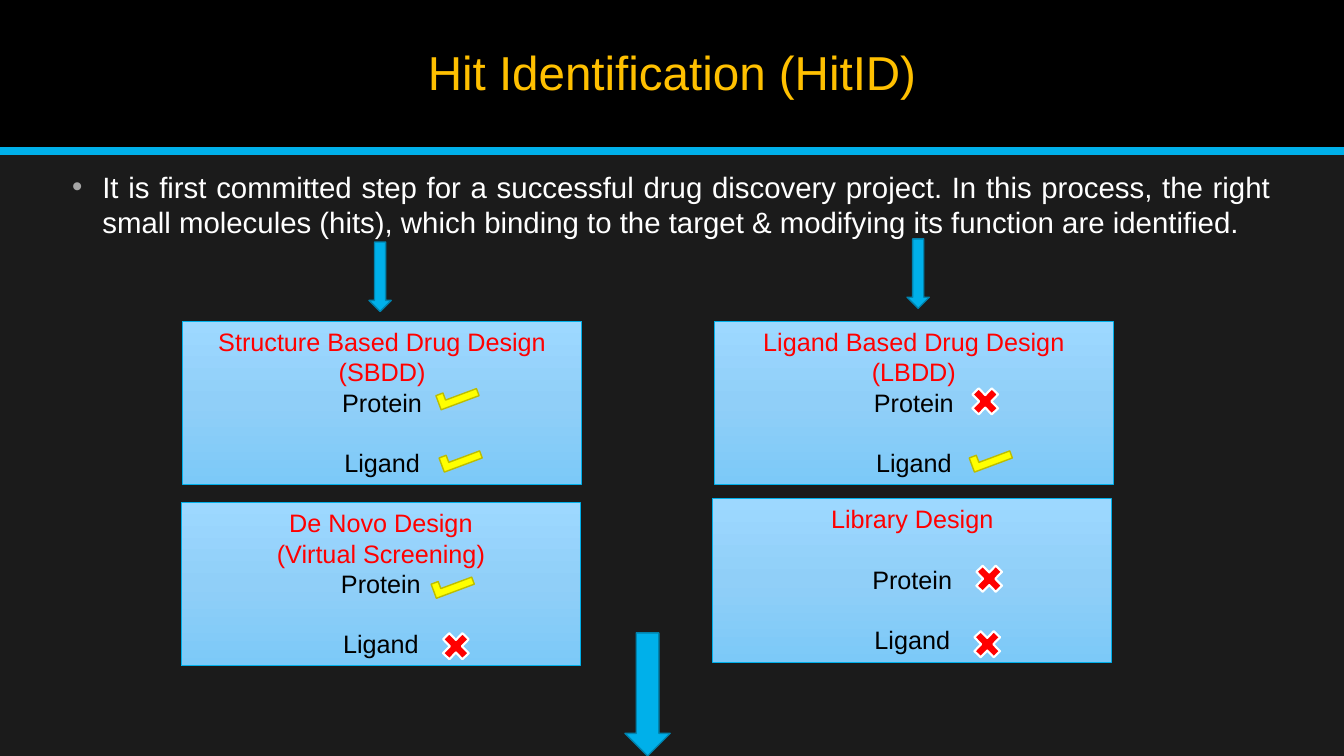
from copy import deepcopy

from pptx import Presentation
from pptx.dml.color import RGBColor
from pptx.enum.shapes import MSO_CONNECTOR, MSO_SHAPE
from pptx.enum.text import MSO_ANCHOR, PP_ALIGN
from pptx.oxml.ns import qn
from pptx.util import Cm, Pt
from lxml import etree

RECTANGLE = MSO_SHAPE.RECTANGLE
DOWN_ARROW = MSO_SHAPE.DOWN_ARROW
CHECK = MSO_SHAPE.CORNER
CROSS = MSO_SHAPE.MATH_MULTIPLY
STRAIGHT = MSO_CONNECTOR.STRAIGHT
CENTER, JUSTIFY = PP_ALIGN.CENTER, PP_ALIGN.JUSTIFY
TOP, MIDDLE = MSO_ANCHOR.TOP, MSO_ANCHOR.MIDDLE

COLORS = {
    "background": "1B1B1B", "band": "000000", "accent": "00B0EA",
    "arrow_edge": "0082AD", "title": "FFC000", "body": "FFFFFF",
    "bullet": "A6A6A6", "heading": "FF0000", "item": "000000",
    "check": "FFFF00", "check_edge": "BDBD00",
    "cross": "FF0000", "cross_edge": "FFFFFF",
    "card_top": "9DD8FF", "card_middle": "90CFF8", "card_bottom": "7CC9F8",
}
SLIDE_WIDTH, BAND_HEIGHT = 33.87, 3.81

prs = Presentation()
prs.slide_width, prs.slide_height = Cm(SLIDE_WIDTH), Cm(19.05)
slide = prs.slides.add_slide(prs.slide_layouts[6])
slide.background.fill.solid()
slide.background.fill.fore_color.rgb = RGBColor.from_string(COLORS["background"])


def add_figure(kind, left, top, width, height, fill=None, edge=None, weight=1):
    figure = slide.shapes.add_shape(kind, Cm(left), Cm(top), Cm(width), Cm(height))
    figure.shadow.inherit = False
    if fill:
        figure.fill.solid()
        figure.fill.fore_color.rgb = RGBColor.from_string(COLORS[fill])
    if edge:
        figure.line.color.rgb = RGBColor.from_string(COLORS[edge])
        figure.line.width = Pt(weight)
    else:
        figure.line.fill.background()
    return figure


def style_paragraph(paragraph, size, color, align):
    paragraph.alignment = align
    for run in paragraph.runs:
        run.font.name = "Arial"
        run.font.size = Pt(size)
        run.font.color.rgb = RGBColor.from_string(COLORS[color])


# Header band and rule
add_figure(RECTANGLE, 0, 0, SLIDE_WIDTH, BAND_HEIGHT, "band")
rule = slide.shapes.add_connector(
    STRAIGHT, 0, Cm(BAND_HEIGHT), Cm(SLIDE_WIDTH), Cm(BAND_HEIGHT))
rule.line.color.rgb = RGBColor.from_string(COLORS["accent"])
rule.line.width = Pt(6)
etree.SubElement(rule._element.spPr, qn("a:effectLst"))

# Title and introduction
title = slide.shapes.add_textbox(Cm(2.97), Cm(0.36), Cm(27.94), Cm(3.05)).text_frame
title.word_wrap = True
title.vertical_anchor = MIDDLE
title.text = "Hit Identification (HitID)"
title.paragraphs[0].line_spacing = 0.9
style_paragraph(title.paragraphs[0], 34, "title", CENTER)

intro = slide.shapes.add_textbox(Cm(1.57), Cm(4.14), Cm(30.71), Cm(2.36)).text_frame
intro.word_wrap = True
intro.text = (
    "It is first committed step for a successful drug discovery project. "
    "In this process, the right small molecules (hits), which binding to the "
    "target & modifying its function are identified.")
style_paragraph(intro.paragraphs[0], 21, "body", JUSTIFY)
intro_format = intro.paragraphs[0]._p.get_or_add_pPr()
intro_format.set("marL", str(Cm(0.76)))
intro_format.set("indent", str(-Cm(0.76)))
bullet_color = etree.SubElement(intro_format, qn("a:buClr"))
etree.SubElement(bullet_color, qn("a:srgbClr"), val=COLORS["bullet"])
etree.SubElement(intro_format, qn("a:buFont"), typeface="Arial")
etree.SubElement(intro_format, qn("a:buChar"), char="•")

# Design approaches: left, top, heading lines, marks for protein and ligand
approaches = [
    (4.6, 8.1, ["Structure Based Drug Design", "(SBDD)"],
     [(CHECK, 11.02, 9.78), (CHECK, 11.1, 11.35)]),
    (4.57, 12.67, ["De Novo Design", "(Virtual Screening)"],
     [(CHECK, 10.9, 14.53), (CROSS, 11.02, 15.8)]),
    (18.0, 8.1, ["Ligand Based Drug Design", "(LBDD)"],
     [(CROSS, 24.36, 9.63), (CHECK, 24.46, 11.35)]),
    (17.96, 12.57, ["Library Design"],
     [(CROSS, 24.46, 14.1), (CROSS, 24.41, 15.75)]),
]
LINE_GAP = Pt(21.6)
for left, top, heading, marks in approaches:
    card = add_figure(RECTANGLE, left, top, 10.06, 4.11, edge="accent", weight=0.5)
    card.fill.gradient()
    card.fill.gradient_angle = 270
    stops = card.fill.gradient_stops
    for stop, position, color in zip(stops, (0, 1), ("card_top", "card_bottom")):
        stop.position = position
        stop.color.rgb = RGBColor.from_string(COLORS[color])
    first_stop = card._element.spPr.find(".//" + qn("a:gs"))
    middle_stop = deepcopy(first_stop)
    middle_stop.set("pos", "50000")
    middle_stop.find(qn("a:srgbClr")).set("val", COLORS["card_middle"])
    first_stop.addnext(middle_stop)

    words = card.text_frame
    words.word_wrap = True
    words.vertical_anchor = TOP
    words.text = "\n".join(heading + ["Protein", "Ligand"])
    for index, paragraph in enumerate(words.paragraphs):
        color = "heading" if index < len(heading) else "item"
        style_paragraph(paragraph, 18, color, CENTER)
    words.paragraphs[-1].space_before = LINE_GAP
    if len(heading) == 1:
        words.paragraphs[1].space_before = LINE_GAP

    for kind, mark_left, mark_top in marks:
        if kind == CHECK:
            check = add_figure(CHECK, mark_left, mark_top, 1.02, 0.38,
                               "check", "check_edge")
            check.rotation = 339.6
        else:
            add_figure(CROSS, mark_left, mark_top, 0.94, 0.97,
                       "cross", "cross_edge", 1.5)

# Flow arrows
for left, top, width, height in [(9.3, 6.1, 0.56, 1.75), (22.86, 6.02, 0.56, 1.75),
                                 (15.75, 15.95, 1.14, 3.1)]:
    add_figure(DOWN_ARROW, left, top, width, height, "accent", "arrow_edge")

prs.save("out.pptx")
